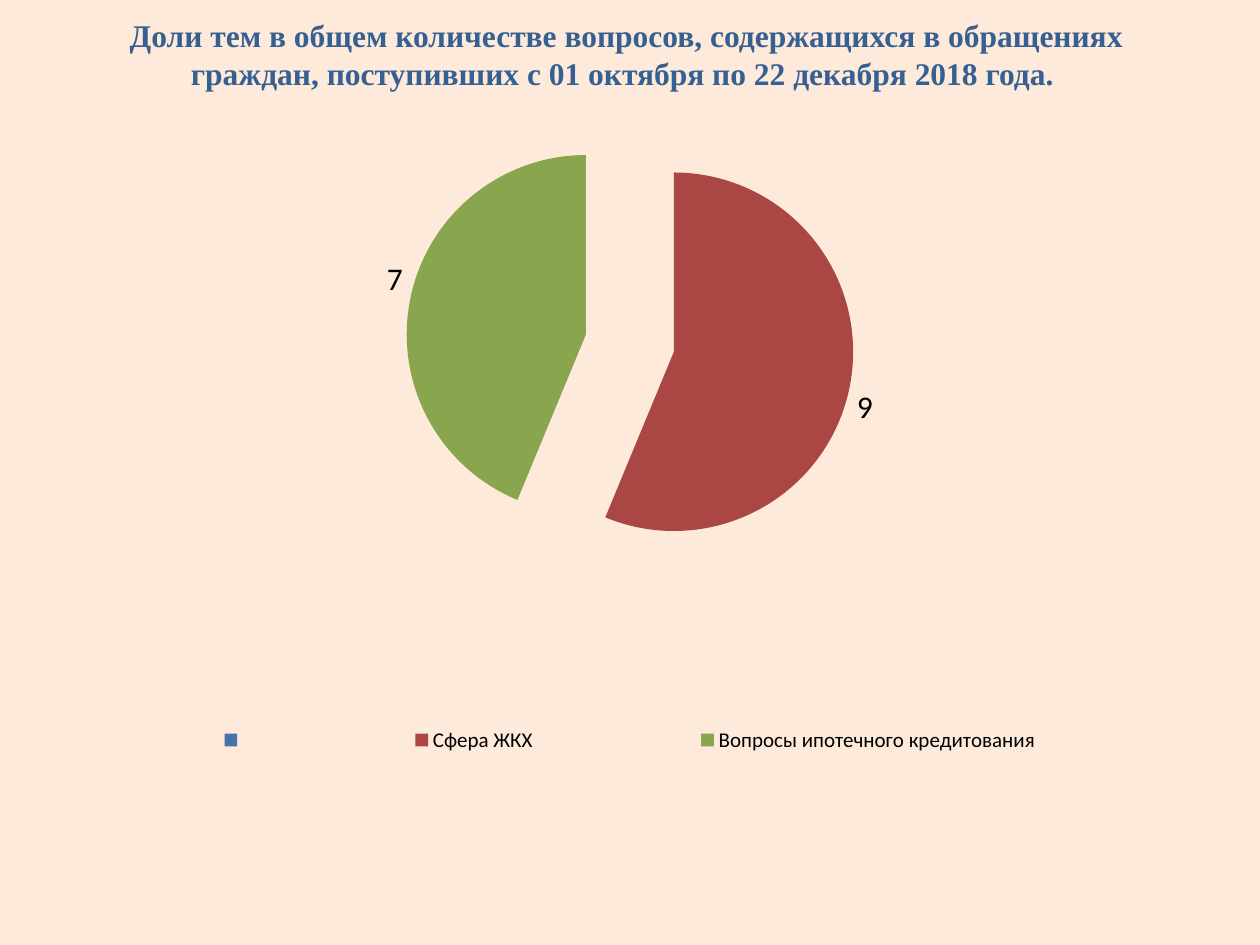
from lxml import etree
from pptx import Presentation
from pptx.chart.data import CategoryChartData
from pptx.dml.color import RGBColor
from pptx.enum.chart import XL_CHART_TYPE, XL_LABEL_POSITION, XL_LEGEND_POSITION
from pptx.enum.text import MSO_ANCHOR, PP_ALIGN
from pptx.oxml.ns import qn
from pptx.util import Pt

PIE = XL_CHART_TYPE.PIE
OUTER = XL_LABEL_POSITION.OUTSIDE_END
BOTTOM = XL_LEGEND_POSITION.BOTTOM
MIDDLE = MSO_ANCHOR.MIDDLE
CENTER = PP_ALIGN.CENTER

CREAM = RGBColor(0xFD, 0xEA, 0xDA)
NAVY = RGBColor(0x37, 0x60, 0x92)
BLACK = RGBColor(0, 0, 0)
BLUE = RGBColor(0x45, 0x72, 0xA7)
RED = RGBColor(0xAA, 0x46, 0x43)
GREEN = RGBColor(0x89, 0xA5, 0x4E)

TITLE = ("Доли тем в общем количестве вопросов, содержащихся в обращениях "
         "граждан, поступивших с 01 октября по 22 декабря 2018 года. ")
TOPICS = [("", None, BLUE), ("Сфера ЖКХ", 9, RED),
          ("Вопросы ипотечного кредитования", 7, GREEN)]


def set_font(font, name, size, color):
    font.name = name
    font.size = Pt(size)
    font.color.rgb = color


def add_title(slide, left, top, width, height):
    box = slide.shapes.add_textbox(Pt(left), Pt(top), Pt(width), Pt(height))
    frame = box.text_frame
    frame.word_wrap = True
    frame.vertical_anchor = MIDDLE
    para = frame.paragraphs[0]
    para.text = TITLE
    para.alignment = CENTER
    para.font.bold = True
    set_font(para.font, "Times New Roman", 18, NAVY)


def set_layout(parent, after, inner, **box):
    for old in parent.findall(qn("c:layout")):
        parent.remove(old)
    layout = etree.Element(qn("c:layout"))
    manual = etree.SubElement(layout, qn("c:manualLayout"))
    parts = [("layoutTarget", "inner")] if inner else []
    parts += [("xMode", "edge"), ("yMode", "edge"), *box.items()]
    for tag, value in parts:
        etree.SubElement(manual, qn(f"c:{tag}")).set("val", str(value))
    if after is None:
        parent.insert(0, layout)
    else:
        after.addnext(layout)


def add_pie(slide, left, top, width, height):
    data = CategoryChartData()
    data.categories = [name for name, _, _ in TOPICS]
    data.add_series("Series 1", [value for _, value, _ in TOPICS])
    frame = slide.shapes.add_chart(PIE, Pt(left), Pt(top), Pt(width), Pt(height), data)
    chart = frame.chart
    chart.has_title = False
    set_font(chart.font, "Calibri", 18, BLACK)

    plot = chart.plots[0]
    plot.vary_by_categories = True
    series = plot.series[0]
    for index, (_, _, color) in enumerate(TOPICS):
        fill = series.points[index].format.fill
        fill.solid()
        fill.fore_color.rgb = color
    burst = etree.Element(qn("c:explosion"), val="25")
    series._element.find(qn("c:tx")).addnext(burst)
    labels = series.data_labels
    labels.show_value = True
    labels.position = OUTER
    set_font(labels.font, "Calibri", 18, BLACK)

    chart.has_legend = True
    legend = chart.legend
    legend.position = BOTTOM
    legend.include_in_layout = False
    set_font(legend.font, "Calibri", 12, BLACK)
    key = legend._element
    set_layout(key, key.find(qn("c:legendPos")), False, x=0, y=0.72, w=1, h=0.15)
    area = chart._chartSpace.find(".//" + qn("c:plotArea"))
    set_layout(area, None, True, x=0, y=0.026, w=1, h=0.555)


def main():
    deck = Presentation()
    deck.slide_width = Pt(720)
    deck.slide_height = Pt(540)
    slide = deck.slides.add_slide(deck.slide_layouts[6])
    back = slide.background.fill
    back.solid()
    back.fore_color.rgb = CREAM
    add_title(slide, 34, 0, 648, 62)
    add_pie(slide, 36, 56, 648, 461.5)
    deck.save("out.pptx")


if __name__ == "__main__":
    main()
